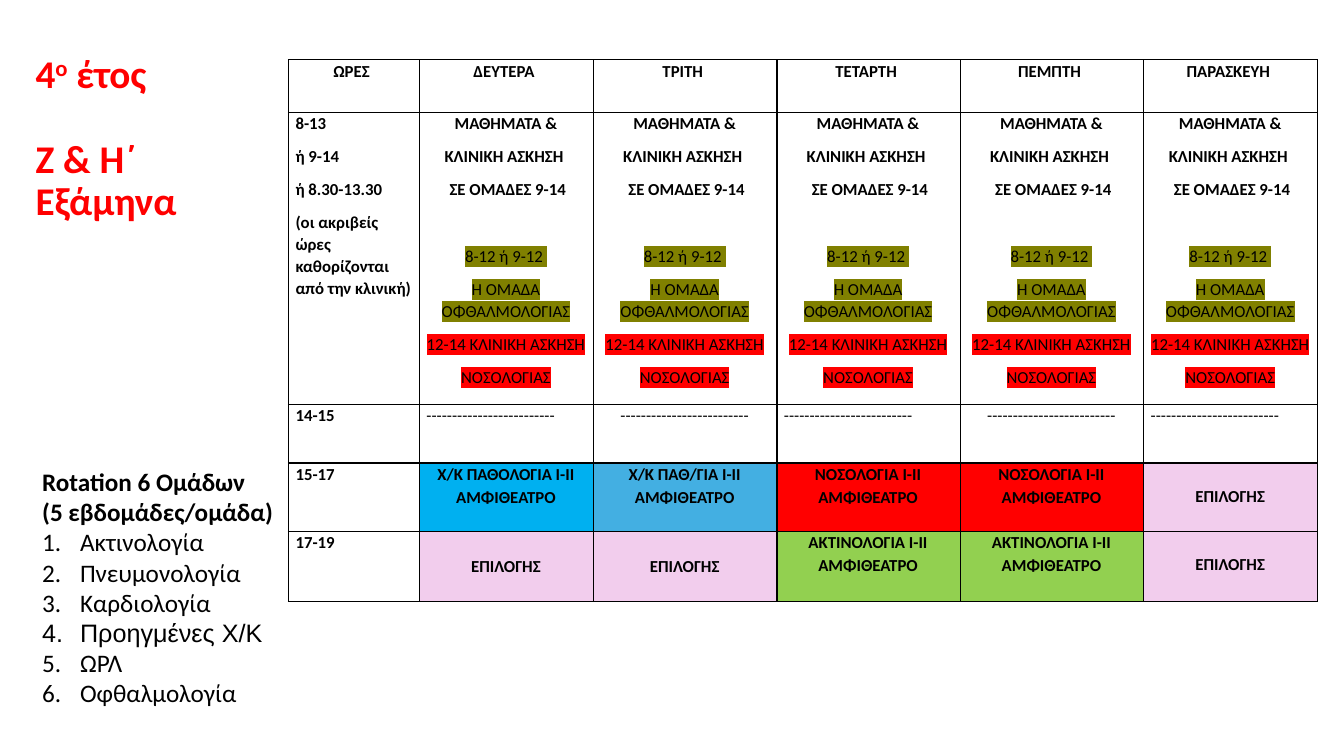
from lxml.etree import SubElement
from pptx import Presentation
from pptx.dml.color import RGBColor
from pptx.enum.text import MSO_ANCHOR as Anchor, MSO_AUTO_SIZE as AutoSize, PP_ALIGN as Align
from pptx.oxml import parse_xml
from pptx.oxml.ns import nsdecls, qn
from pptx.util import Pt

BLACK, RED, OLIVE = "000000", "FF0000", "808000"
BLUE, SKY, GREEN, PINK = "00B0F0", "43AFE2", "92D050", "F2CDED"
BLANK_LINE = 15.7

year = [[("4", 0), ("ο", 30000), (" έτος", 0)], [("Ζ & Η΄", 0)], [("Εξάμηνα", 0)]]
year_gaps = [0, 30.4, 0]

rotation_heading = ["Rotation 6 Ομάδων", "(5 εβδομάδες/ομάδα)"]
rotation_groups = ["Ακτινολογία", "Πνευμονολογία", "Καρδιολογία",
                   "Προηγμένες Χ/Κ", "ΩΡΛ", "Οφθαλμολογία"]
arial_groups = ["Προηγμένες Χ/Κ"]

days = ["ΩΡΕΣ ", "ΔΕΥΤΕΡΑ ", "ΤΡΙΤΗ ", "ΤΕΤΑΡΤΗ ", "ΠΕΜΠΤΗ ", "ΠΑΡΑΣΚΕΥΗ "]
morning_hours = ["8-13", "ή 9-14", "ή 8.30-13.30",
                 "(οι ακριβείς ώρες καθορίζονται από την κλινική)"]
morning_classes = [
    ("ΜΑΘΗΜΑΤΑ &", None, 0),
    ("ΚΛΙΝΙΚΗ ΑΣΚΗΣΗ ", None, 8),
    (" ΣΕ ΟΜΑΔΕΣ 9-14", None, 8),
    ("8-12 ή 9-12 ", OLIVE, 16 + BLANK_LINE),
    ("Η ΟΜΑΔΑ ΟΦΘΑΛΜΟΛΟΓΙΑΣ", OLIVE, 8),
    ("12-14 ΚΛΙΝΙΚΗ ΑΣΚΗΣΗ", RED, 8),
    ("ΝΟΣΟΛΟΓΙΑΣ", RED, 8),
]
break_dashes = "-" * 25
break_aligns = [Align.LEFT, Align.CENTER, Align.LEFT, Align.CENTER, Align.LEFT]
hall, elective = "ΑΜΦΙΘΕΑΤΡΟ", "ΕΠΙΛΟΓΗΣ"
afternoons = [
    ("15-17", [("Χ/Κ ΠΑΘΟΛΟΓΙΑ Ι-ΙΙ", BLUE), ("Χ/Κ ΠΑΘ/ΓΙΑ Ι-ΙΙ", SKY),
               ("ΝΟΣΟΛΟΓΙΑ Ι-ΙΙ", RED), ("ΝΟΣΟΛΟΓΙΑ Ι-ΙΙ", RED), (elective, PINK)]),
    ("17-19", [(elective, PINK), (elective, PINK),
               ("ΑΚΤΙΝΟΛΟΓΙΑ Ι-ΙΙ", GREEN), ("ΑΚΤΙΝΟΛΟΓΙΑ Ι-ΙΙ", GREEN), (elective, PINK)]),
]
column_widths = [93.5, 124.4, 131, 131, 131, 124.4]
row_heights = [37.5, 208.6, 42, 49, 49.7]

cell_format = dict(margin_left=Pt(5), margin_right=Pt(5.8), margin_top=0, margin_bottom=0)
frame_format = dict(margin_left=Pt(7.2), margin_right=Pt(7.2), margin_top=Pt(3.6),
                    margin_bottom=Pt(3.6), word_wrap=True, auto_size=AutoSize.NONE,
                    vertical_anchor=Anchor.TOP)


def rgb(color):
    return RGBColor.from_string(color)


def apply(target, values):
    for key, value in values.items():
        setattr(target, key, value)


def paragraphs(frame, count):
    return [frame.paragraphs[0]] + [frame.add_paragraph() for _ in range(count - 1)]


def add_run(paragraph, text, size, bold=True, color=BLACK, face="Calibri"):
    run = paragraph.add_run()
    run.text = text
    apply(run.font, dict(size=Pt(size), bold=bold, name=face))
    run.font.color.rgb = rgb(color)
    return run._r.get_or_add_rPr()


def highlight(run_props, color):
    mark = parse_xml(f'<a:highlight {nsdecls("a")}><a:srgbClr val="{color}"/></a:highlight>')
    run_props.find(qn("a:solidFill")).addnext(mark)


def fill_cell(cell, lines, align=Align.CENTER, bold=True, fill=None, layout=None):
    apply(cell, {**cell_format, **(layout or {})})
    for paragraph, (text, mark, gap) in zip(paragraphs(cell.text_frame, len(lines)), lines):
        apply(paragraph, dict(alignment=align, line_spacing=1.07, space_before=Pt(gap)))
        run_props = add_run(paragraph, text, 12, bold and not mark)
        if mark:
            highlight(run_props, mark)
    if fill:
        cell.fill.solid()
        cell.fill.fore_color.rgb = rgb(fill)
    else:
        cell.fill.background()
    for index, side in enumerate(("lnL", "lnR", "lnT", "lnB")):
        border = parse_xml(f'<a:{side} {nsdecls("a")} w="12700"><a:solidFill>'
                           f'<a:srgbClr val="{BLACK}"/></a:solidFill></a:{side}>')
        cell._tc.get_or_add_tcPr().insert(index, border)


def add_year(slide):
    title = slide.shapes.title
    apply(title, dict(left=Pt(18.2), top=Pt(35.3), width=Pt(196.6), height=Pt(129.6)))
    apply(title.text_frame, frame_format)
    for paragraph, pieces, gap in zip(paragraphs(title.text_frame, len(year)), year, year_gaps):
        apply(paragraph, dict(alignment=Align.LEFT, line_spacing=0.9, space_before=Pt(gap)))
        for text, baseline in pieces:
            run_props = add_run(paragraph, text, 28, color=RED)
            if baseline:
                run_props.set("baseline", str(baseline))


def add_timetable(slide):
    timetable = slide.shapes.add_table(
        len(row_heights), len(column_widths), Pt(206.1), Pt(42.7),
        Pt(sum(column_widths)), Pt(sum(row_heights))).table
    apply(timetable, dict(first_row=False, horz_banding=False))
    for column, width in zip(timetable.columns, column_widths):
        column.width = Pt(width)
    for row, height in zip(timetable.rows, row_heights):
        row.height = Pt(height)

    for col, day in enumerate(days):
        fill_cell(timetable.cell(0, col), [(day, None, 0)])
    hours = [(text, None, 8 if index else 0) for index, text in enumerate(morning_hours)]
    fill_cell(timetable.cell(1, 0), hours, Align.LEFT)
    fill_cell(timetable.cell(2, 0), [("14-15", None, 0)], Align.LEFT)
    for col, align in enumerate(break_aligns, 1):
        fill_cell(timetable.cell(1, col), morning_classes)
        fill_cell(timetable.cell(2, col), [(break_dashes, None, 0)], align, bold=False)

    for row, (time, courses) in enumerate(afternoons, 3):
        fill_cell(timetable.cell(row, 0), [(time, None, 0)], Align.LEFT)
        for col, (course, color) in enumerate(courses, 1):
            lines, layout = [(course, None, 0)], {}
            if course != elective:
                lines.append((hall, None, 0.5))
            elif col == len(courses):
                layout = dict(margin_top=Pt(BLANK_LINE))
            else:
                layout = dict(vertical_anchor=Anchor.MIDDLE)
            fill_cell(timetable.cell(row, col), lines, fill=color, layout=layout)


def add_rotation(slide):
    frame = slide.shapes.add_textbox(Pt(23.1), Pt(329.4), Pt(247.7), Pt(181.4)).text_frame
    apply(frame, frame_format)
    entries = rotation_heading + rotation_groups
    for paragraph, text in zip(paragraphs(frame, len(entries)), entries):
        face = "Arial" if text in arial_groups else "Calibri"
        add_run(paragraph, text, 18, text in rotation_heading, face=face)
        if text in rotation_groups:
            props = paragraph._p.get_or_add_pPr()
            props.set("marL", str(Pt(27)))
            props.set("indent", str(-Pt(27)))
            SubElement(SubElement(props, qn("a:buClr")), qn("a:srgbClr"), val=BLACK)
            SubElement(props, qn("a:buAutoNum"), type="arabicPeriod")


def main():
    deck = Presentation()
    apply(deck, dict(slide_width=Pt(960), slide_height=Pt(540)))
    slide = deck.slides.add_slide(deck.slide_layouts[5])
    add_year(slide)
    add_timetable(slide)
    add_rotation(slide)
    deck.save("out.pptx")


if __name__ == "__main__":
    main()
